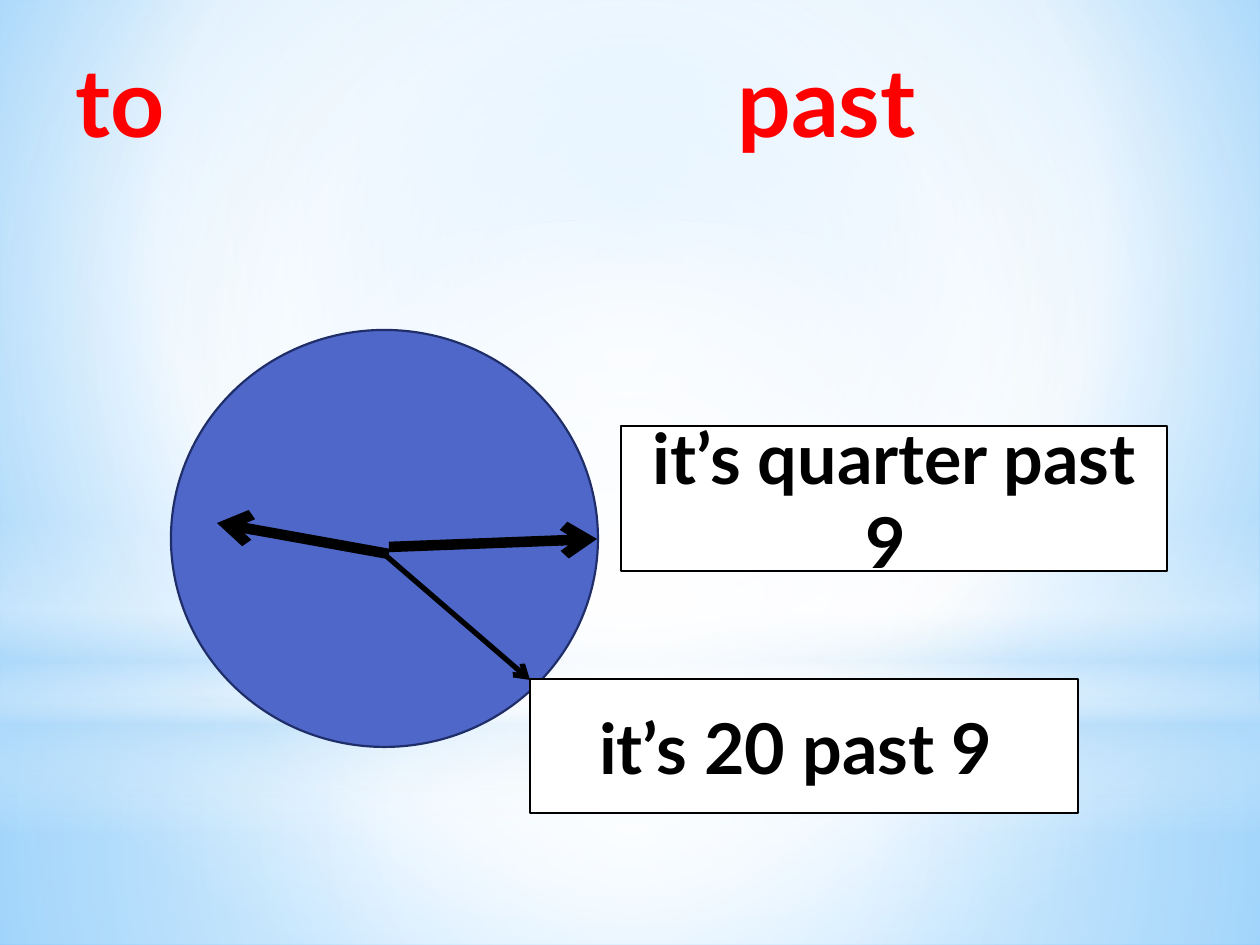
from lxml import etree
from pptx import Presentation
from pptx.dml.color import RGBColor
from pptx.enum.shapes import MSO_CONNECTOR, MSO_SHAPE
from pptx.enum.text import MSO_ANCHOR, PP_ALIGN
from pptx.oxml.ns import qn
from pptx.util import Pt

RECTANGLE, OVAL = MSO_SHAPE.RECTANGLE, MSO_SHAPE.OVAL
STRAIGHT = MSO_CONNECTOR.STRAIGHT
MIDDLE, CENTER = MSO_ANCHOR.MIDDLE, PP_ALIGN.CENTER

BLACK = RGBColor(0x00, 0x00, 0x00)
WHITE = RGBColor(0xFF, 0xFF, 0xFF)
RED = RGBColor(0xFF, 0x00, 0x00)
CLOCK_BLUE = RGBColor(0x4E, 0x67, 0xC8)
CLOCK_EDGE = RGBColor(0x1F, 0x2E, 0x69)
SKY = RGBColor(0x9E, 0xD5, 0xFF)
DEEP_SKY = RGBColor(0x5B, 0xB9, 0xFF)
PALE_SKY = RGBColor(0xB4, 0xDC, 0xFA)

SCALE = 914400 / 126
WIDTH, HEIGHT = 1260, 945
MIDPOINT = (50, 50, 50, 50)


def px(length):
    return round(length * SCALE)


def gradient(stops, focus=None):
    fill = etree.Element(qn("a:gradFill"), rotWithShape="1")
    stop_list = etree.SubElement(fill, qn("a:gsLst"))
    for position, color, opacity in stops:
        stop = etree.SubElement(stop_list, qn("a:gs"), pos=str(position * 1000))
        tint = etree.SubElement(stop, qn("a:srgbClr"), val=str(color))
        if opacity < 100:
            etree.SubElement(tint, qn("a:alpha"), val=str(opacity * 1000))
    if focus:
        path = etree.SubElement(fill, qn("a:path"), path="circle")
        sides = {side: str(share * 1000) for side, share in zip("ltrb", focus)}
        etree.SubElement(path, qn("a:fillToRect"), sides)
    else:
        etree.SubElement(fill, qn("a:lin"), ang="5400000", scaled="0")
    return fill


class ClockSlide:
    """Draws the elements of a time-telling slide in one style."""

    font_name = "Lato"

    def __init__(self, slide):
        self.slide = slide

    def style(self, paragraph, size, color):
        font = paragraph.font
        font.name, font.size, font.bold = self.font_name, Pt(size), True
        font.color.rgb = color

    def backdrop(self, stops, focus):
        self.slide.background.fill.solid()
        solid = self.slide.element.find(".//" + qn("p:bgPr")).find(qn("a:solidFill"))
        solid.getparent().replace(solid, gradient(stops, focus))

    def shape(self, kind, box, fill):
        shape = self.slide.shapes.add_shape(kind, *map(px, box))
        shape.shadow.inherit = False
        shape.fill.solid()
        shape.fill.fore_color.rgb = fill
        return shape

    def glow(self, kind, box, stops, focus=None):
        glow = self.shape(kind, box, WHITE)
        glow.line.fill.background()
        solid = glow.element.spPr.find(qn("a:solidFill"))
        solid.getparent().replace(solid, gradient(stops, focus))

    def outlined(self, kind, box, fill, edge):
        shape = self.shape(kind, box, fill)
        shape.line.color.rgb = edge
        shape.line.width = Pt(1.25)
        return shape

    def answer(self, box, text):
        frame = self.outlined(RECTANGLE, box, WHITE, BLACK).text_frame
        frame.word_wrap = True
        frame.vertical_anchor = MIDDLE
        paragraph = frame.paragraphs[0]
        paragraph.text = text
        paragraph.alignment = CENTER
        self.style(paragraph, 40, BLACK)

    def heading(self, box, text, tab):
        frame = self.slide.shapes.add_textbox(*map(px, box)).text_frame
        frame.word_wrap = True
        paragraph = frame.paragraphs[0]
        paragraph.text = text
        properties = paragraph._p.get_or_add_pPr()
        tabs = etree.SubElement(properties, qn("a:tabLst"))
        etree.SubElement(tabs, qn("a:tab"), pos=str(px(tab)), algn="l")
        self.style(paragraph, 54, RED)

    def hand(self, start, end, width):
        hand = self.slide.shapes.add_connector(STRAIGHT, *map(px, start + end))
        hand.line.color.rgb = BLACK
        hand.line.width = Pt(width)
        properties = hand.element.spPr
        etree.SubElement(properties.find(qn("a:ln")), qn("a:tailEnd"), type="arrow")
        etree.SubElement(properties, qn("a:effectLst"))


def main():
    deck = Presentation()
    deck.slide_width, deck.slide_height = px(WIDTH), px(HEIGHT)
    page = ClockSlide(deck.slides.add_slide(deck.slide_layouts[6]))

    page.backdrop([(0, SKY, 100), (60, WHITE, 100), (100, DEEP_SKY, 100)], (20, 10, 20, 60))
    horizon = 703
    page.glow(RECTANGLE, (0, horizon, WIDTH, HEIGHT - horizon),
              [(0, WHITE, 91), (37, WHITE, 76), (100, PALE_SKY, 79)], MIDPOINT)
    page.glow(RECTANGLE, (0, 0, WIDTH, horizon),
              [(0, WHITE, 89), (48, WHITE, 62), (100, PALE_SKY, 79)], MIDPOINT)
    page.glow(RECTANGLE, (0, 519, WIDTH, 315),
              [(0, WHITE, 0), (29, WHITE, 30), (45, PALE_SKY, 40),
               (55, WHITE, 26), (65, PALE_SKY, 60), (100, WHITE, 0)])
    page.glow(OVAL, (0, 220, WIDTH, horizon), [(0, WHITE, 100), (56, WHITE, 0)], MIDPOINT)

    page.heading((63, 37, 1134, 808), "to\tpast", 662)
    page.outlined(OVAL, (171, 330, 427, 417), CLOCK_BLUE, CLOCK_EDGE)
    page.hand((389, 554), (217, 523), 6)
    page.hand((389, 547), (597, 539), 6)
    page.answer((530, 679, 548, 134), "it’s 20 past 9 ")
    page.hand((384, 554), (530, 680), 3)
    page.answer((621, 426, 546, 145), "it’s quarter past 9 ")

    deck.save("out.pptx")


if __name__ == "__main__":
    main()
